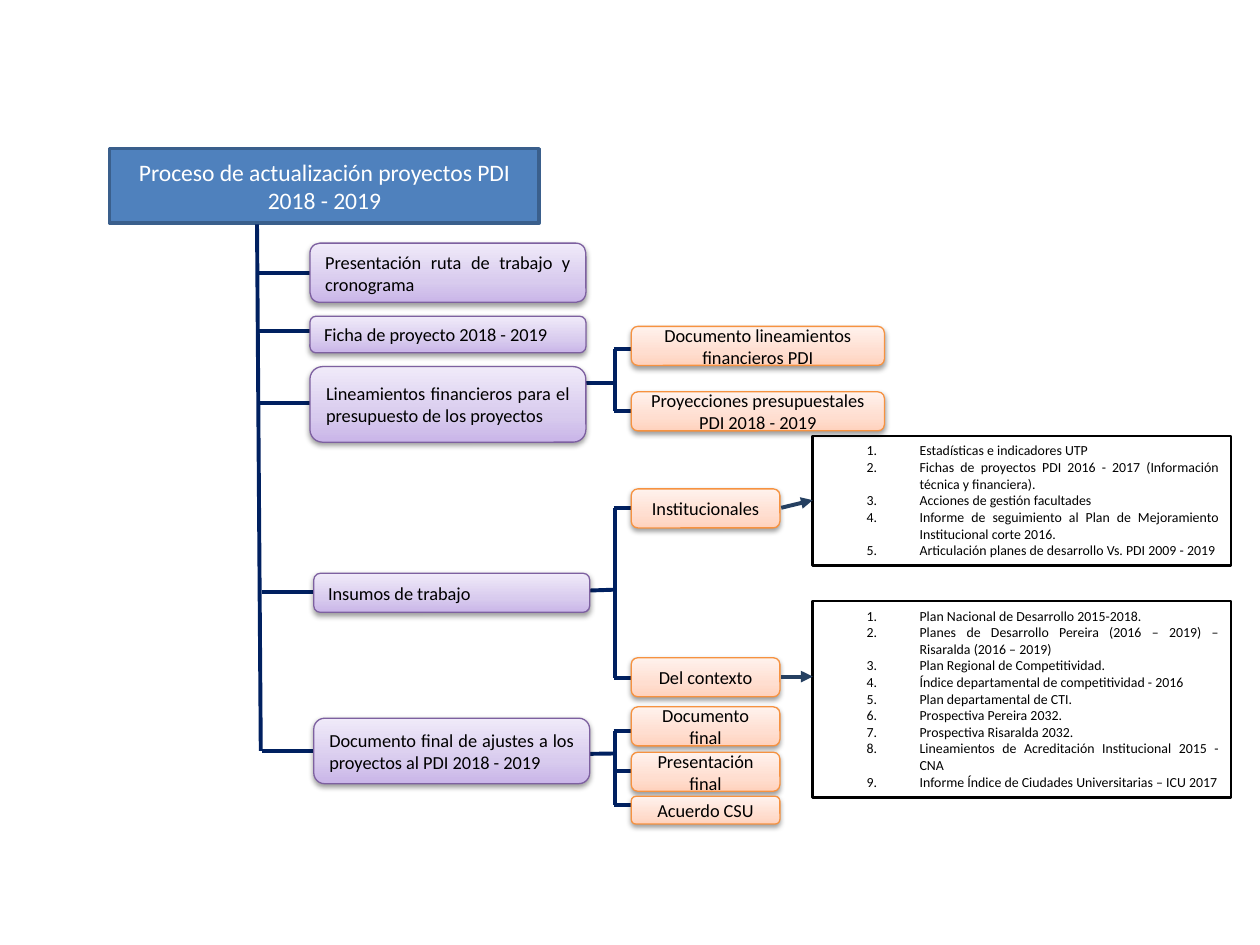
"""Build the slide with the update process tree of the PDI 2018 - 2019 projects."""
from lxml import etree
from pptx import Presentation, util as u
from pptx.dml.color import RGBColor
from pptx.enum import shapes, text
from pptx.oxml import parse_xml
from pptx.oxml.ns import nsdecls, qn

FONT = "Calibri"
NAVY, ARROW = "002060", "254061"
PURPLE = {"stops": ("C9B5E8", "D8CBEE", "F0EAF9"), "line": "7D60A0", "align": text.PP_ALIGN.JUSTIFY}
ORANGE = {"stops": ("FFD2BD", "FFDED0", "FFF2ED"), "line": "F69240", "align": text.PP_ALIGN.CENTER}
STOP_PLACES = (0, 35, 100)
SPINE = (2.04, 1.78, 2.07, 5.96)
BRANCH_WIDTH, STUB_LENGTH = 2.19, 0.53
BRACKET_X, LEAF_X, LEAF_STUB_END = 4.88, 5.01, 5.05

ROOT = "Proceso de actualización proyectos PDI 2018 - 2019"
# branch: label, left, top, height, stub height
BRANCHES = [
    ("Presentación ruta de trabajo y cronograma", 2.46, 1.93, 0.47, 2.17),
    ("Ficha de proyecto 2018 - 2019", 2.46, 2.51, 0.29, 2.63),
    ("Lineamientos financieros para el presupuesto de los proyectos", 2.46, 2.91, 0.6, 3.2),
    ("Insumos de trabajo", 2.49, 4.55, 0.31, 4.7),
    ("Documento final de ajustes a los proyectos al PDI 2018 - 2019", 2.49, 5.7, 0.52, 5.96),
]
BRACKETS = [
    {"link": (4.19, 3.04, 4.89, 3.04), "width": 2.01, "leaves": [
        ("Documento lineamientos financieros PDI", 2.59, 0.31, 2.77),
        ("Proyecciones presupuestales PDI 2018 - 2019", 3.11, 0.31, 3.26)]},
    {"link": (4.28, 4.7, 4.88, 4.68), "width": 1.18, "leaves": [
        ("Institucionales", 3.88, 0.31, 4.03),
        ("Del contexto", 5.22, 0.31, 5.38)]},
    {"link": (4.19, 5.99, 4.89, 5.98), "width": 1.18, "leaves": [
        ("Documento final", 5.61, 0.31, 5.8),
        ("Presentación final", 5.97, 0.31, 6.12),
        ("Acuerdo CSU", 6.32, 0.22, 6.39)]},
]
SOURCES = [
    {"at": (6.45, 3.46, 3.32, 1.03), "arrow": (6.2, 4.03, 6.45, 3.97), "items": [
        "Estadísticas e indicadores UTP",
        "Fichas de proyectos PDI 2016 - 2017 (Información técnica y financiera).",
        "Acciones de gestión facultades",
        "Informe de seguimiento al Plan de Mejoramiento Institucional corte 2016.",
        "Articulación planes de desarrollo Vs. PDI 2009 - 2019"]},
    {"at": (6.45, 4.77, 3.32, 1.56), "arrow": (6.2, 5.37, 6.45, 5.37), "items": [
        "Plan Nacional de Desarrollo 2015-2018.",
        "Planes de Desarrollo Pereira (2016 – 2019) – Risaralda (2016 – 2019)",
        "Plan Regional de Competitividad.",
        "Índice departamental de competitividad - 2016",
        "Plan departamental de CTI.",
        "Prospectiva Pereira 2032.",
        "Prospectiva Risaralda 2032.",
        "Lineamientos de Acreditación Institucional 2015 - CNA",
        "Informe Índice de Ciudades Universitarias – ICU 2017"]},
]


def color(value):
    return RGBColor.from_string(value)


def outline(shape, value, width):
    shape.line.color.rgb = color(value)
    shape.line.width = u.Pt(width)


def style(para, size, value, align):
    para.alignment = align
    for span in para.runs:
        span.font.name, span.font.size = FONT, u.Pt(size)
        span.font.color.rgb = color(value)


def add_line(slide, ends, value=NAVY, arrow=False):
    line = slide.shapes.add_connector(shapes.MSO_CONNECTOR.STRAIGHT, *map(u.Inches, ends))
    outline(line, value, 2.25)
    if arrow:
        etree.SubElement(line.line._get_or_add_ln(), qn("a:tailEnd"), type="triangle")
    etree.SubElement(line._element.spPr, qn("a:effectLst"))


def add_box(slide, kind, at):
    box = slide.shapes.add_shape(kind, *map(u.Inches, at))
    box.shadow.inherit = False
    box.text_frame.word_wrap = True
    return box


def add_node(slide, label, at, look):
    box = add_box(slide, shapes.MSO_SHAPE.ROUNDED_RECTANGLE, at)
    outline(box, look["line"], 0.75)
    stops = "".join(f'<a:gs pos="{place * 1000}"><a:srgbClr val="{value}"/></a:gs>'
                    for place, value in zip(STOP_PLACES, look["stops"]))
    properties = box._element.spPr
    properties.find(qn("a:prstGeom")).addnext(parse_xml(
        f'<a:gradFill {nsdecls("a")} rotWithShape="1"><a:gsLst>{stops}</a:gsLst>'
        '<a:lin ang="16200000" scaled="0"/></a:gradFill>'))
    properties.find(qn("a:effectLst")).append(parse_xml(
        f'<a:outerShdw {nsdecls("a")} blurRad="{u.Pt(3.1)}" dist="{u.Pt(1.6)}" dir="5400000" '
        'rotWithShape="0"><a:srgbClr val="000000"><a:alpha val="38000"/></a:srgbClr></a:outerShdw>'))
    box.text_frame.vertical_anchor = text.MSO_ANCHOR.MIDDLE
    box.text_frame.text = label
    style(box.text_frame.paragraphs[0], 10.5, "000000", look["align"])


def add_numbered_list(slide, items, at):
    box = add_box(slide, shapes.MSO_SHAPE.RECTANGLE, at)
    box.fill.background()
    outline(box, "000000", 1.5)
    frame = box.text_frame
    frame.vertical_anchor = text.MSO_ANCHOR.TOP
    frame.auto_size = text.MSO_AUTO_SIZE.SHAPE_TO_FIT_TEXT
    frame.text = "\n".join(items)
    for para in frame.paragraphs:
        para.level = 1
        properties = para._p.get_or_add_pPr()
        properties.set("marL", str(u.Inches(0.75)))
        properties.set("indent", str(u.Inches(-0.42)))
        etree.SubElement(properties, qn("a:buFont"), typeface="+mj-lt")
        etree.SubElement(properties, qn("a:buAutoNum"), type="arabicPeriod")
        style(para, 7.9, "000000", text.PP_ALIGN.JUSTIFY)


def add_root(slide):
    title = slide.shapes.title
    title.left, title.top, title.width, title.height = map(u.Inches, (0.87, 1.18, 3.41, 0.59))
    title.fill.solid()
    title.fill.fore_color.rgb = color("4F81BD")
    outline(title, "3A5F8C", 2)
    frame = title.text_frame
    frame.text = ROOT
    frame.word_wrap = True
    frame.auto_size = text.MSO_AUTO_SIZE.NONE
    frame.vertical_anchor = text.MSO_ANCHOR.MIDDLE
    style(frame.paragraphs[0], 13.5, "FFFFFF", text.PP_ALIGN.CENTER)


def main():
    deck = Presentation()
    deck.slide_width, deck.slide_height = u.Inches(10), u.Inches(7.5)
    slide = deck.slides.add_slide(deck.slide_layouts[5])
    add_root(slide)
    add_line(slide, SPINE)
    for label, left, top, height, stub in BRANCHES:
        start = left - 0.41
        add_line(slide, (start, stub, start + STUB_LENGTH, stub))
    for bracket in BRACKETS:
        stubs = [leaf[-1] for leaf in bracket["leaves"]]
        add_line(slide, bracket["link"])
        add_line(slide, (BRACKET_X, stubs[0], BRACKET_X, stubs[-1]))
        for stub in stubs:
            add_line(slide, (BRACKET_X - 0.01, stub, LEAF_STUB_END, stub))
    for label, left, top, height, stub in BRANCHES:
        add_node(slide, label, (left, top, BRANCH_WIDTH, height), PURPLE)
    for bracket in BRACKETS:
        for label, top, height, stub in bracket["leaves"]:
            add_node(slide, label, (LEAF_X, top, bracket["width"], height), ORANGE)
    for source in SOURCES:
        add_numbered_list(slide, source["items"], source["at"])
        add_line(slide, source["arrow"], ARROW, arrow=True)
    deck.save("out.pptx")


if __name__ == "__main__":
    main()
